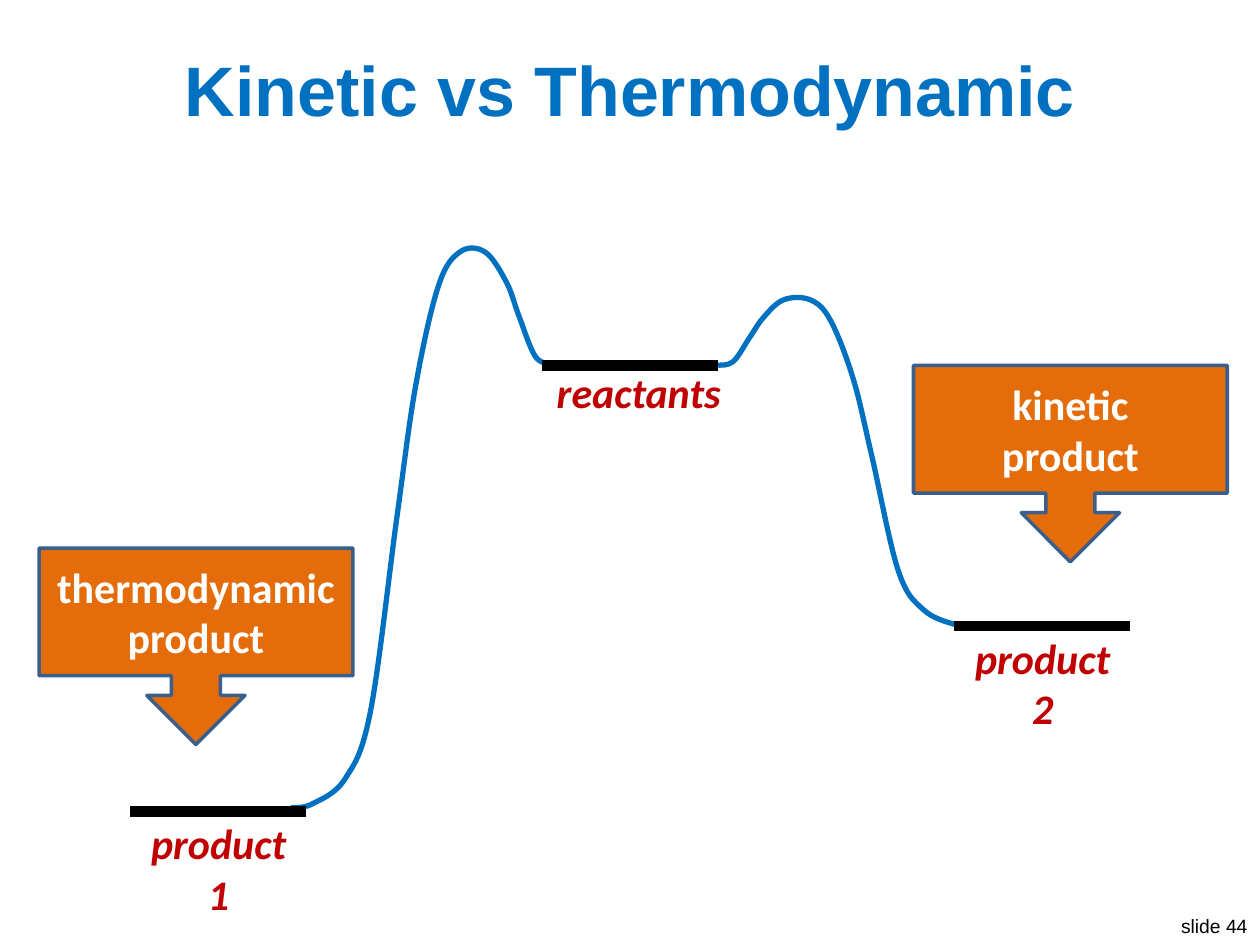
from pptx import Presentation
from pptx.dml.color import RGBColor
from pptx.enum import shapes, text
from pptx.oxml.ns import qn
from pptx.util import Inches, Pt

BLUE, RED, BLACK = "0070C0", "C00000", "000000"
MID = text.PP_ALIGN.CENTER
LEFT = text.PP_ALIGN.LEFT
RIGHT = text.PP_ALIGN.RIGHT


def color(code):
    return RGBColor.from_string(code)


def write(frame, lines, size, font, code, align=MID, bold=True, slant=False):
    for i, line in enumerate(lines):
        para = frame.paragraphs[0] if i == 0 else frame.add_paragraph()
        para.alignment = align
        run = para.add_run()
        run.text = line
        run.font.size = Pt(size)
        run.font.name = font
        run.font.bold = bold
        run.font.italic = slant
        run.font.color.rgb = color(code)


def label(slide, box, lines, size, font, code, wrap=False, **style):
    frame = slide.shapes.add_textbox(*map(Inches, box)).text_frame
    frame.word_wrap = wrap
    frame.vertical_anchor = text.MSO_ANCHOR.MIDDLE if wrap else text.MSO_ANCHOR.TOP
    write(frame, lines, size, font, code, **style)


def level(slide, left, top, width=1.4):
    bar = slide.shapes.add_connector(
        shapes.MSO_CONNECTOR.STRAIGHT,
        Inches(left + width), Inches(top), Inches(left), Inches(top))
    bar.line.color.rgb = color(BLACK)
    bar.line.width = Pt(6)
    props = bar._element.spPr
    props.append(props.makeelement(qn("a:effectLst"), {}))


def smooth(knots):
    ends = [knots[0], *knots, knots[-1]]
    dots = []
    for a, b, c, d in zip(ends, ends[1:], ends[2:], ends[3:]):
        dots.append(tuple(q + (r - p) / 6 for p, q, r in zip(a, b, c)))
        dots.append(tuple(r - (s - q) / 6 for q, r, s in zip(b, c, d)))
        dots.append(c)
    return dots


def bend(path):
    steps = path.findall(qn("a:lnTo"))
    for trio in zip(steps[::3], steps[1::3], steps[2::3]):
        arc = path.makeelement(qn("a:cubicBezTo"), {})
        trio[0].addprevious(arc)
        for step in trio:
            arc.append(step[0])
            path.remove(step)


def curve(slide, knots):
    build = slide.shapes.build_freeform(*map(Inches, knots[0]))
    build.add_line_segments(
        [(Inches(x), Inches(y)) for x, y in smooth(knots)], close=False)
    shape = build.convert_to_shape()
    bend(next(shape._element.iter(qn("a:path"))))
    shape.shadow.inherit = False
    shape.fill.background()
    shape.line.color.rgb = color(BLUE)
    shape.line.width = Pt(3)


def callout(slide, left, top, lines):
    shape = slide.shapes.add_shape(
        shapes.MSO_SHAPE.DOWN_ARROW_CALLOUT,
        Inches(left), Inches(top), Inches(2.49), Inches(1.56))
    shape.shadow.inherit = False
    shape.fill.solid()
    shape.fill.fore_color.rgb = color("E46C0A")
    shape.line.color.rgb = color("3A5F8C")
    shape.line.width = Pt(2)
    shape.text_frame.word_wrap = True
    shape.text_frame.vertical_anchor = text.MSO_ANCHOR.MIDDLE
    write(shape.text_frame, lines, 24, "Calibri", "FFFFFF")


def state(slide, left, top, box, lines, align=MID):
    level(slide, left, top)
    label(slide, box, lines, 24, "Calibri", RED, align=align, slant=True)


def main():
    deck = Presentation()
    deck.slide_width, deck.slide_height = Inches(10), Inches(7.5)
    slide = deck.slides.add_slide(deck.slide_layouts[6])

    label(slide, (9.25, 7.21, 0.75, 0.29), ["slide 44"], 11, "Arial", BLACK,
          align=RIGHT, bold=False)
    curve(slide, [(4.38, 2.89), (4.25, 2.83), (4.12, 2.51), (4.02, 2.24),
                  (3.85, 2), (3.65, 2), (3.48, 2.27), (3.3, 3.06),
                  (3.15, 4.11), (2.94, 5.65), (2.74, 6.18), (2.48, 6.38),
                  (2.31, 6.41)])
    curve(slide, [(5.7, 2.9), (5.82, 2.87), (5.95, 2.68), (6.06, 2.52),
                  (6.22, 2.38), (6.43, 2.38), (6.59, 2.54), (6.77, 3),
                  (6.92, 3.62), (7.13, 4.53), (7.33, 4.84), (7.59, 4.96),
                  (7.76, 4.97)])
    state(slide, 4.3, 2.9, (4.32, 2.86, 1.52, 0.5), ["reactants"], LEFT)
    for left, top, name in ((1.03, 6.44, "1"), (7.57, 4.97, "2")):
        state(slide, left, top, (left + 0.06, top, 1.29, 0.91), ["product", name])
    label(slide, (0.2, 0.3, 9.6, 0.8), ["Kinetic vs Thermodynamic"],
          40, "Arial", BLUE, wrap=True)
    callout(slide, 0.31, 4.35, ["thermodynamic product"])
    callout(slide, 7.25, 2.9, ["kinetic", "product"])
    deck.save("out.pptx")


if __name__ == "__main__":
    main()
